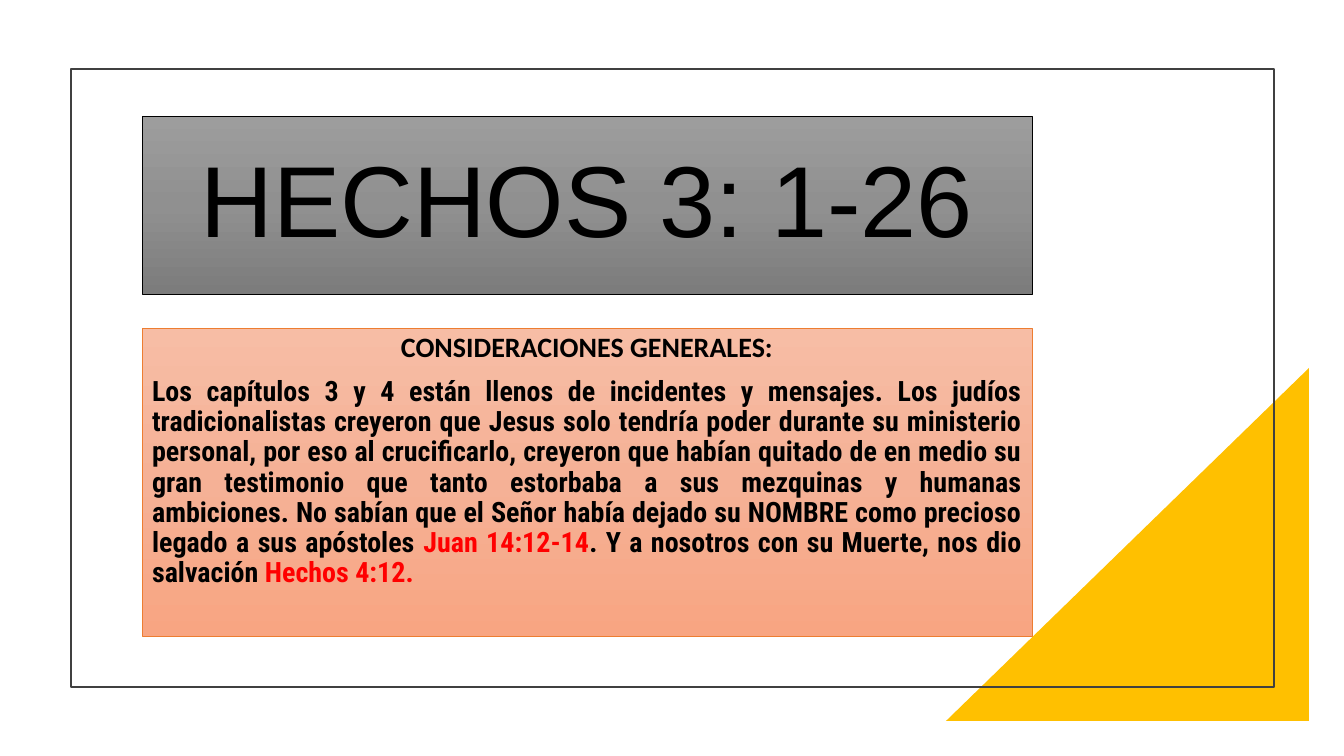
"""Build the Hechos 3: 1-26 title slide."""
from copy import deepcopy

from pptx import Presentation
from pptx import util as u
from pptx.dml.color import RGBColor
from pptx.enum import shapes, text

PX = 9144000 / 1008
THEME = {
    "black": "000000", "red": "FF0000", "gold": "FFC000", "frame": "404040", "orange": "ED7D31",
    "gray_gradient": ("9D9D9D", "909090", "7C7C7C"),
    "peach_gradient": ("F7BDA5", "F5B196", "F8A582"),
    "title_font": "Arial", "heading_font": "Calibri", "body_font": "Roboto Condensed",
    "title_size": 72, "body_size": 20,
}


def place(shape, left, top, width, height):
    shape.left, shape.top, shape.width, shape.height = (
        u.Emu(round(length * PX)) for length in (left, top, width, height))


def color(name):
    return RGBColor.from_string(THEME[name])


presentation = Presentation()
presentation.slide_width = u.Emu(round(1344 * PX))
presentation.slide_height = u.Emu(round(756 * PX))
slide = presentation.slides.add_slide(presentation.slide_layouts[0])

triangle = slide.shapes.add_shape(shapes.MSO_SHAPE.RIGHT_TRIANGLE, 0, 0, 0, 0)
place(triangle, 946, 368, 363, 353)
triangle.element.spPr.xfrm.set("flipH", "1")
triangle.shadow.inherit = False
triangle.fill.solid()
triangle.fill.fore_color.rgb = color("gold")
triangle.line.fill.background()

frame = slide.shapes.add_shape(shapes.MSO_SHAPE.RECTANGLE, 0, 0, 0, 0)
place(frame, 71, 69, 1203, 618)
frame.shadow.inherit = False
frame.fill.background()
frame.line.color.rgb = color("frame")
frame.line.width = u.Pt(1.5)

title = slide.shapes.title
subtitle = slide.placeholders[1]
CENTER, JUSTIFY = text.PP_ALIGN.CENTER, text.PP_ALIGN.JUSTIFY
MIDDLE, TOP = text.MSO_ANCHOR.MIDDLE, text.MSO_ANCHOR.TOP
title_paragraphs = [
    (CENTER, 0, "title_font", "title_size", [("HECHOS 3: 1-26", "black")]),
]
subtitle_paragraphs = [
    (CENTER, 10, "heading_font", "body_size", [("CONSIDERACIONES GENERALES:", "black")]),
    (JUSTIFY, 10, "body_font", "body_size", [
        ("Los capítulos 3 y 4 están llenos de incidentes y mensajes. Los judíos "
         "tradicionalistas creyeron que Jesus solo tendría poder durante su ministerio "
         "personal, por eso al crucificarlo, creyeron que habían quitado de en medio su "
         "gran testimonio que tanto estorbaba a sus mezquinas y humanas ambiciones. "
         "No sabían que el Señor había dejado su NOMBRE como precioso legado a sus "
         "apóstoles ", "black"),
        ("Juan 14:12-14", "red"),
        (". Y a nosotros con su Muerte, nos dio salvación ", "black"),
        ("Hechos 4:12.", "red"),
    ]),
]
panels = [
    (title, 116, 178, "gray_gradient", "black", MIDDLE, False, title_paragraphs),
    (subtitle, 328, 308, "peach_gradient", "orange", TOP, True, subtitle_paragraphs),
]

for panel, top, height, gradient, outline, anchor, bold, paragraphs in panels:
    slide.shapes.element.append(panel.element)
    place(panel, 142, top, 890, height)

    panel.fill.gradient()
    panel.fill.gradient_angle = 270
    stop_list = panel.element.spPr.find(".//{*}gsLst")
    stop_list.insert(1, deepcopy(stop_list[0]))
    for index, stop in enumerate(panel.fill.gradient_stops):
        stop.position = index / 2
        stop.color.rgb = RGBColor.from_string(THEME[gradient][index])
    panel.line.color.rgb = color(outline)
    panel.line.width = u.Pt(0.5)

    frame_text = panel.text_frame
    frame_text.word_wrap = True
    frame_text.auto_size = text.MSO_AUTO_SIZE.NONE
    frame_text.vertical_anchor = anchor
    for index, (alignment, space_before, font, size, runs) in enumerate(paragraphs):
        paragraph = frame_text.add_paragraph() if index else frame_text.paragraphs[0]
        paragraph.alignment = alignment
        paragraph.line_spacing = 0.9
        paragraph.space_before = u.Pt(space_before)
        for words, ink in runs:
            run = paragraph.add_run()
            run.text = words
            run.font.name = THEME[font]
            run.font.size = u.Pt(THEME[size])
            run.font.bold = bold
            run.font.color.rgb = color(ink)

presentation.save("out.pptx")
